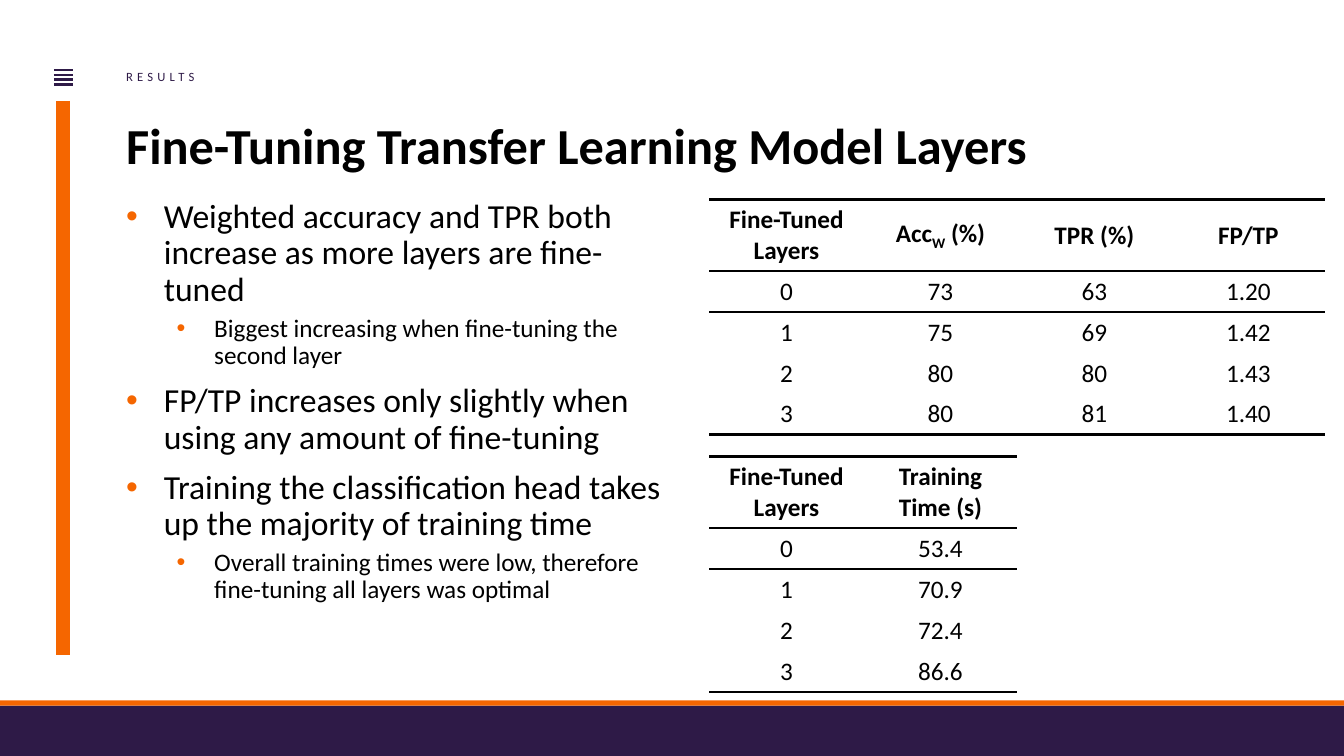
from lxml import etree
from pptx import Presentation
from pptx.dml.color import RGBColor
from pptx.enum.shapes import MSO_CONNECTOR, MSO_SHAPE
from pptx.enum.text import MSO_ANCHOR, MSO_AUTO_SIZE, PP_ALIGN
from pptx.oxml.ns import qn
from pptx.util import Cm, Pt

LINE = MSO_CONNECTOR.STRAIGHT
RECT = MSO_SHAPE.RECTANGLE
TOP, MIDDLE = MSO_ANCHOR.TOP, MSO_ANCHOR.MIDDLE
LEFT, CENTER = PP_ALIGN.LEFT, PP_ALIGN.CENTER
FIXED = MSO_AUTO_SIZE.NONE
TITLE_ONLY = 5
NO_GRID_STYLE = "{2D5ABB26-0587-4C30-8999-92F81FD0307C}"


def rgb(hex_code):
    return RGBColor.from_string(hex_code)


def write(paragraph, text, size=18, color="000000", bold=False, font="Calibri",
          align=LEFT, spacing=None, before=0, tracking=None, baseline=None):
    """Add one formatted run and set its paragraph's layout."""
    paragraph.alignment = align
    paragraph.space_before = Pt(before)
    if spacing:
        paragraph.line_spacing = spacing
    run = paragraph.add_run()
    run.text = text
    run.font.name, run.font.size, run.font.bold = font, Pt(size), bold
    run.font.color.rgb = rgb(color)
    for name, value in (("spc", tracking), ("baseline", baseline)):
        if value is not None:
            run.font._element.set(name, str(value))


class Deck:
    purple, orange, black = "2E1A47", "F56600", "000000"

    def __init__(self, width, height):
        self.file = Presentation()
        self.file.slide_width, self.file.slide_height = Cm(width), Cm(height)
        layout = self.file.slide_layouts[TITLE_ONLY]
        self.slide = self.file.slides.add_slide(layout)
        self.shapes = self.slide.shapes

    def line(self, x1, y1, x2, y2, color, weight):
        line = self.shapes.add_connector(LINE, Cm(x1), Cm(y1), Cm(x2), Cm(y2))
        line.line.color.rgb = rgb(color)
        line.line.width = Pt(weight)
        etree.SubElement(line._element.spPr, qn("a:effectLst"))

    def bar(self, x, y, width, height, color):
        bar = self.shapes.add_shape(RECT, Cm(x), Cm(y), Cm(width), Cm(height))
        bar.shadow.inherit = False
        bar.fill.solid()
        bar.fill.fore_color.rgb = rgb(color)
        bar.line.fill.background()

    def frame(self, shape):
        frame = shape.text_frame
        frame.word_wrap = True
        frame.auto_size = FIXED
        frame.vertical_anchor = TOP
        frame.margin_left = frame.margin_right = 0
        frame.margin_top = frame.margin_bottom = 0
        return frame

    def title(self, x, y, width, height, text):
        title = self.shapes.title
        title.left, title.top = Cm(x), Cm(y)
        title.width, title.height = Cm(width), Cm(height)
        write(self.frame(title).paragraphs[0], text, size=36, bold=True, spacing=0.8)

    def box(self, x, y, width, height):
        return self.frame(self.shapes.add_textbox(Cm(x), Cm(y), Cm(width), Cm(height)))

    def label(self, x, y, width, height, text):
        write(self.box(x, y, width, height).paragraphs[0], text, size=9,
              color=self.purple, spacing=0.9, tracking=300)

    def bullets(self, x, y, width, height, items):
        frame = self.box(x, y, width, height)
        for index, (level, text) in enumerate(items):
            paragraph = frame.add_paragraph() if index else frame.paragraphs[0]
            paragraph.level = level
            properties = paragraph._p.get_or_add_pPr()
            properties.set("marL", str(Cm(0.95 + 1.27 * level)))
            properties.set("indent", str(-Cm(0.95)))
            bullet_color = etree.SubElement(properties, qn("a:buClr"))
            etree.SubElement(bullet_color, qn("a:srgbClr"), val=self.orange)
            etree.SubElement(properties, qn("a:buFont"), typeface="Arial")
            etree.SubElement(properties, qn("a:buChar"), char="•")
            before = (5 if level else 10) if index else 0
            write(paragraph, text, size=18 if level else 24, spacing=0.9, before=before)

    def border(self, cell, side, weight):
        properties = cell._tc.get_or_add_tcPr()
        line = etree.Element(qn("a:" + side), w=str(Pt(weight)))
        fill = etree.SubElement(line, qn("a:solidFill"))
        etree.SubElement(fill, qn("a:srgbClr"), val=self.black)
        properties.insert(len(properties.findall(qn("a:lnT"))), line)

    def table(self, x, y, rows, column=3.88, header=1.78, row_height=1.03):
        count = len(rows[0])
        height = header + row_height * (len(rows) - 1)
        table = self.shapes.add_table(len(rows), count, Cm(x), Cm(y),
                                      Cm(column * count), Cm(height)).table
        table.first_row = table.horz_banding = False
        table._tbl.tblPr.find(qn("a:tableStyleId")).text = NO_GRID_STYLE
        for table_column in table.columns:
            table_column.width = Cm(column)
        rules = {0: 1.5, 1: 1.5, len(rows) - 1: 2.25}
        for r, values in enumerate(rows):
            table.rows[r].height = Cm(row_height if r else header)
            for c, value in enumerate(values):
                cell = table.cell(r, c)
                cell.fill.background()
                cell.vertical_anchor = MIDDLE
                # A tuple holds text, subscript, text
                parts = value if isinstance(value, tuple) else (value,)
                for part, text in enumerate(parts):
                    write(cell.text_frame.paragraphs[0], text, bold=r == 0,
                          align=CENTER, baseline=-25000 if part == 1 else None)
                if r == 0:
                    self.border(cell, "lnT", 2.25)
                if r in rules:
                    self.border(cell, "lnB", rules[r])


def main():
    deck = Deck(33.87, 19.05)

    # Menu mark, side rule and footer
    for step in range(4):
        y = 1.76 + 0.125 * step
        deck.line(1.36, y, 1.85, y, deck.purple, 1.75)
    deck.line(1.6, 2.54, 1.6, 16.51, deck.orange, 10)
    deck.bar(0, 17.78, 33.87, 1.27, deck.purple)
    deck.bar(0, 17.65, 33.87, 0.13, deck.orange)

    # Headings
    deck.title(3.18, 3.18, 23.95, 1.27, "Fine-Tuning Transfer Learning Model Layers")
    deck.label(3.18, 1.78, 10.6, 0.36, "RESULTS")

    # Findings
    deck.bullets(3.18, 5.03, 13.77, 11.58, [
        (0, "Weighted accuracy and TPR both increase as more layers are fine-tuned"),
        (1, "Biggest increasing when fine-tuning the second layer"),
        (0, "FP/TP increases only slightly when using any amount of fine-tuning"),
        (0, "Training the classification head takes up the majority of training time"),
        (1, "Overall training times were low, therefore fine-tuning all layers was optimal"),
    ])

    # Accuracy and training time
    deck.table(17.88, 5.03, [
        ("Fine-Tuned Layers", ("Acc", "W", " (%)"), "TPR (%)", "FP/TP"),
        ("0", "73", "63", "1.20"),
        ("1", "75", "69", "1.42"),
        ("2", "80", "80", "1.43"),
        ("3", "80", "81", "1.40"),
    ])
    deck.table(17.88, 11.51, [
        ("Fine-Tuned Layers", "Training Time (s)"),
        ("0", "53.4"),
        ("1", "70.9"),
        ("2", "72.4"),
        ("3", "86.6"),
    ])

    deck.file.save("out.pptx")


if __name__ == "__main__":
    main()
